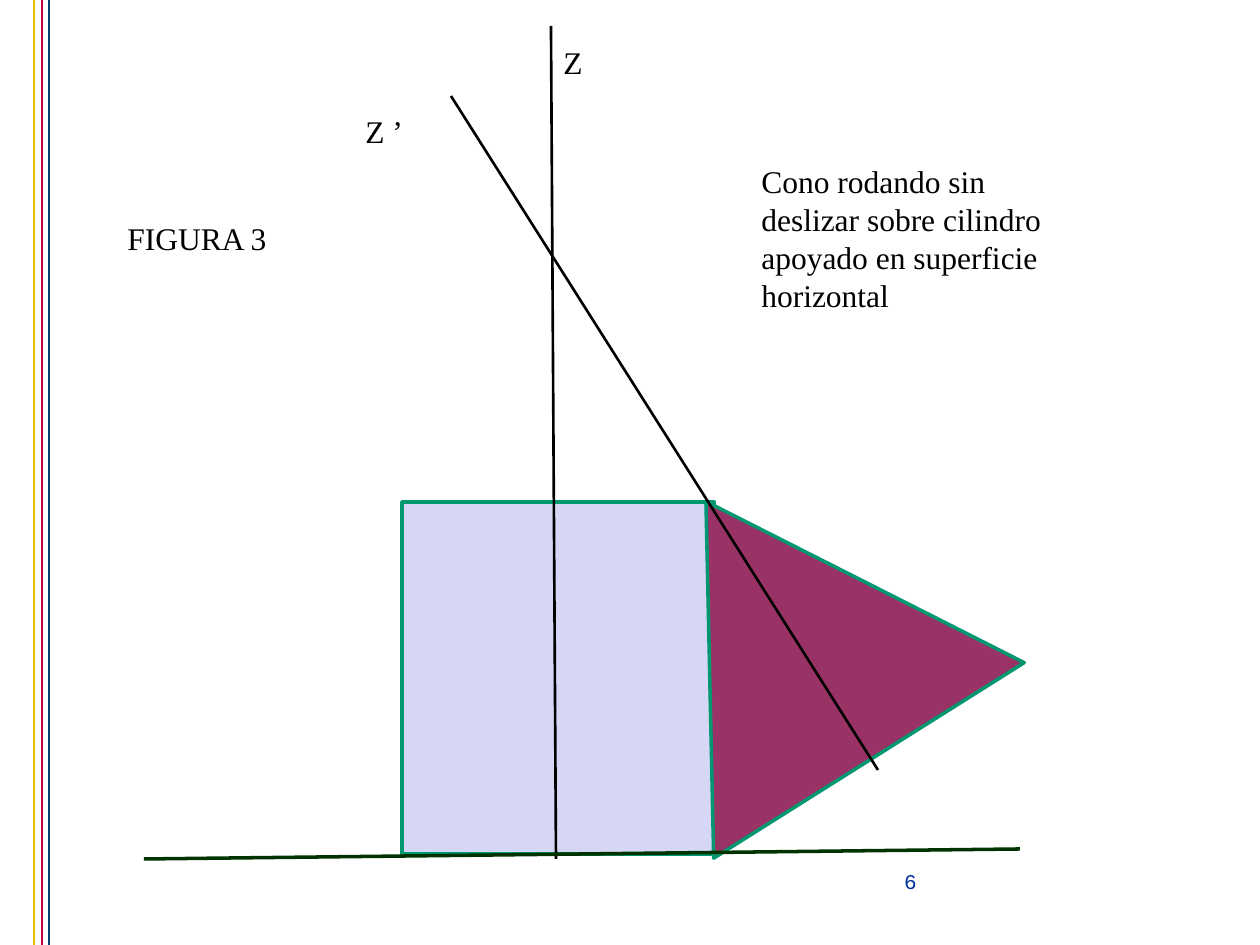
import pptx
import pptx.util
import pptx.dml.color
import pptx.enum.shapes
import pptx.enum.text
import pptx.oxml.ns
from lxml import etree

RGB = pptx.dml.color.RGBColor
KIND = pptx.enum.shapes.MSO_SHAPE
ALIGN = pptx.enum.text.PP_ALIGN

PX = 914400 // 126
WIDE, HIGH = 1260, 945
BLACK = RGB(0, 0, 0)
BLUE = RGB(0x00, 0x33, 0x99)
YELLOW = RGB(0xEB, 0xBD, 0x00)
RED = RGB(0xC1, 0x00, 0x3D)
NAVY = RGB(0x00, 0x3F, 0x6D)
LILAC = RGB(0xD6, 0xD6, 0xF5)
PLUM = RGB(0x99, 0x33, 0x66)
GREEN = RGB(0x00, 0x97, 0x71)
FOREST = RGB(0x00, 0x33, 0x00)
SERIF, MONO = "Times New Roman", "Courier New"

STRIPES = [(34, YELLOW), (42, RED), (49, NAVY)]
SOLIDS = [
    (KIND.RECTANGLE, (402, 502, 312, 352), 0, LILAC),
    (KIND.ISOSCELES_TRIANGLE, (604, 478, 367, 306), 327.8, PLUM),
]
AXES = [
    ((551, 26, 556, 859), BLACK, 1.5),
    ((451, 96, 878, 770), BLACK, 1.5),
    ((144, 859, 1020, 849), FOREST, 2),
]
LABELS = [
    ("Z", (551, 37, 128, 50)),
    ("Z ’", (353, 106, 128, 50)),
    ("Cono rodando sin deslizar sobre cilindro apoyado en superficie horizontal",
     (749, 156, 338, 165)),
    ("FIGURA 3", (115, 213, 238, 50)),
]
NUMBER = ("6", (874, 862, 73, 34))


def scale(box):
    return [v * PX for v in box]


def add_line(slide, ends, color, width):
    line = slide.shapes.add_connector(
        pptx.enum.shapes.MSO_CONNECTOR.STRAIGHT, *scale(ends))
    line.line.color.rgb = color
    line.line.width = pptx.util.Pt(width)
    etree.SubElement(line._element.spPr, pptx.oxml.ns.qn("a:effectLst"))


def add_solid(slide, kind, box, turn, fill):
    shape = slide.shapes.add_shape(kind, *scale(box))
    shape.rotation = turn
    shape.shadow.inherit = False
    shape.fill.solid()
    shape.fill.fore_color.rgb = fill
    shape.line.color.rgb = GREEN
    shape.line.width = pptx.util.Pt(2)


def add_label(slide, text, box, font=SERIF, size=18, color=BLACK, align=ALIGN.LEFT):
    frame = slide.shapes.add_textbox(*scale(box)).text_frame
    frame.word_wrap = True
    para = frame.paragraphs[0]
    para.alignment = align
    run = para.add_run()
    run.text = text
    run.font.name = font
    run.font.size = pptx.util.Pt(size)
    run.font.color.rgb = color


def main():
    deck = pptx.Presentation()
    deck.slide_width, deck.slide_height = WIDE * PX, HIGH * PX
    slide = deck.slides.add_slide(deck.slide_layouts[6])
    add_label(slide, *NUMBER, MONO, 12, BLUE, ALIGN.CENTER)
    for x, color in STRIPES:
        add_line(slide, (x, 0, x, HIGH), color, 1.5)
    for text, box in LABELS:
        add_label(slide, text, box)
    for solid in SOLIDS:
        add_solid(slide, *solid)
    for axis in AXES:
        add_line(slide, *axis)
    deck.save("out.pptx")


if __name__ == "__main__":
    main()
